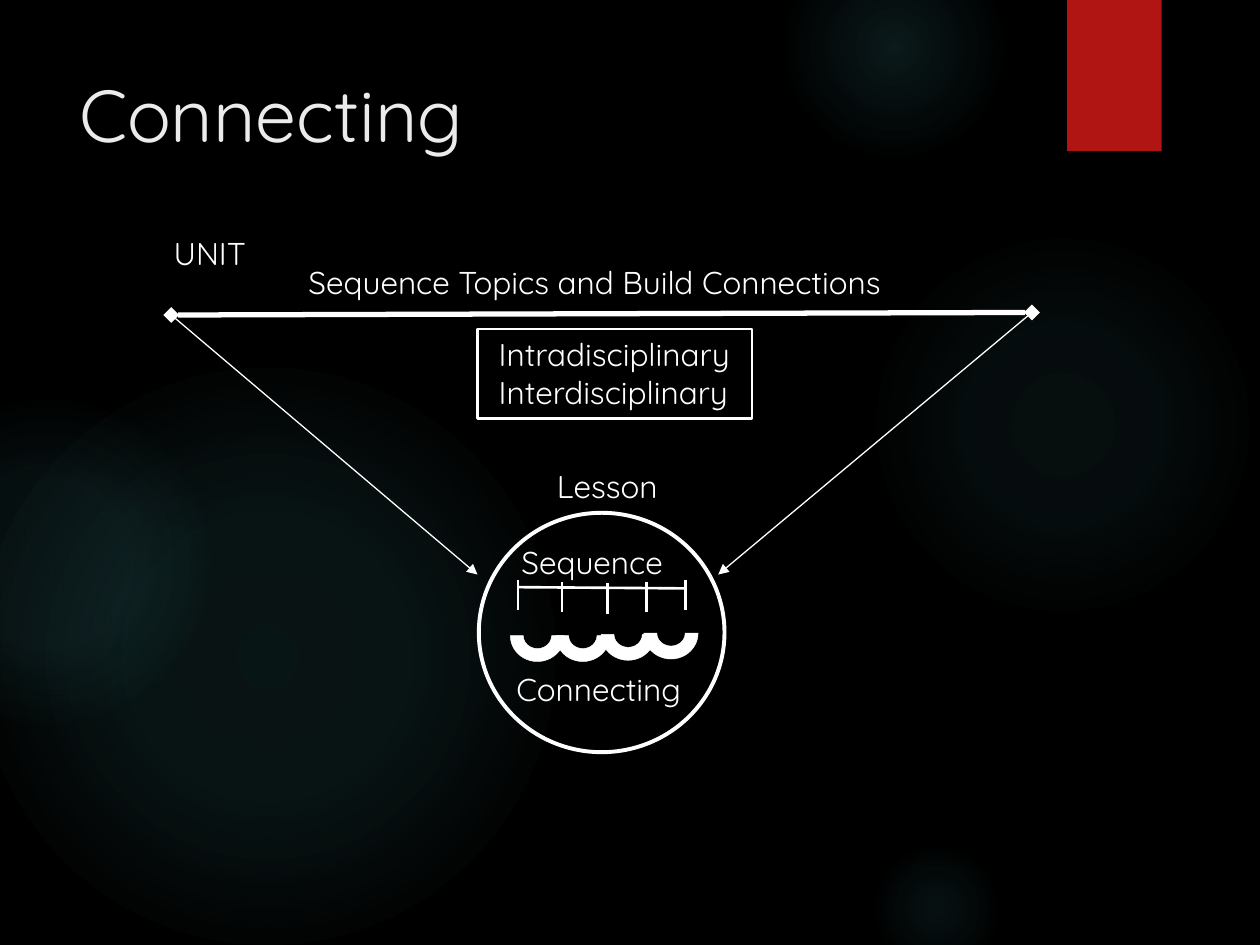
import lxml.etree
import pptx
import pptx.dml.color
import pptx.enum.shapes
import pptx.enum.text
import pptx.oxml.ns
import pptx.util

PX = 9144  # EMU in one px, at 100 px to the inch
FONT = "Quicksand"
COLORS = {
    "background": "000000",
    "glow": "50B9C1",
    "ribbon": "B01513",
    "title": "EBEBEB",
    "ink": "FFFFFF",
}
SHAPES = pptx.enum.shapes.MSO_SHAPE


def emu(*lengths):
    return [pptx.util.Emu(length * PX) for length in lengths]


def rgb(name):
    return pptx.dml.color.RGBColor.from_string(COLORS[name])


def add_child(parent, tag, **attributes):
    child = lxml.etree.SubElement(parent, pptx.oxml.ns.qn(tag))
    for key, value in attributes.items():
        child.set(key, str(value))
    return child


def add_shape(slide, kind, box, fill=None, line_width=0):
    shape = slide.shapes.add_shape(kind, *emu(*box))
    shape.shadow.inherit = False
    if fill:
        shape.fill.solid()
        shape.fill.fore_color.rgb = rgb(fill)
    else:
        shape.fill.background()
    if line_width:
        shape.line.color.rgb = rgb("ink")
        shape.line.width = pptx.util.Pt(line_width)
    else:
        shape.line.fill.background()
    return shape


def add_text(slide, box, text, size=18, color="ink", centered=False):
    shape = slide.shapes.add_textbox(*emu(*box))
    text_frame = shape.text_frame
    text_frame.word_wrap = True
    text_frame.text = text
    for paragraph in text_frame.paragraphs:
        if centered:
            paragraph.alignment = pptx.enum.text.PP_ALIGN.CENTER
        for run in paragraph.runs:
            run.font.name = FONT
            run.font.size = pptx.util.Pt(size)
            run.font.color.rgb = rgb(color)
    return shape


def add_line(slide, start, end, width, head=None, tail=None):
    connector = slide.shapes.add_connector(
        pptx.enum.shapes.MSO_CONNECTOR.STRAIGHT, *emu(*start, *end))
    connector.line.color.rgb = rgb("ink")
    connector.line.width = pptx.util.Pt(width)
    outline = connector.line._get_or_add_ln()
    if head:
        add_child(outline, "a:headEnd", type=head)
    if tail:
        add_child(outline, "a:tailEnd", type=tail)
    add_child(connector._element.spPr, "a:effectLst")
    return connector


def add_glow(slide, box, stops):
    """Soft round light; stops are (position, opacity) in percent."""
    shape = add_shape(slide, SHAPES.OVAL, box)
    properties = shape._element.spPr
    gradient = add_child(properties, "a:gradFill", rotWithShape=1)
    stop_list = add_child(gradient, "a:gsLst")
    for position, opacity in stops:
        stop = add_child(stop_list, "a:gs", pos=position * 1000)
        color = add_child(stop, "a:srgbClr", val=COLORS["glow"])
        add_child(color, "a:alpha", val=opacity * 1000)
    center = add_child(gradient, "a:path", path="circle")
    add_child(center, "a:fillToRect", l=50000, t=50000, r=50000, b=50000)
    no_fill = properties.find(pptx.oxml.ns.qn("a:noFill"))
    properties.replace(no_fill, gradient)


def add_backdrop(slide):
    slide.background.fill.solid()
    slide.background.fill.fore_color.rgb = rgb("background")
    # left, top, diameter, inner and middle opacity, end of the light
    glows = [
        (689, 183, 308, 7, 6, 69),
        (622, -50, 175, 14, 7, 73),
        (689, 667, 108, 9, 5, 66),
        (-17, 292, 458, 11, 10, 75),
        (-92, 317, 258, 8, 8, 72),
    ]
    for left, top, diameter, inner, middle, end in glows:
        add_glow(slide, (left, top, diameter, diameter),
                 [(0, inner), (36, middle), (end, 0)])
    add_shape(slide, SHAPES.RECTANGLE, (847, 0, 75, 120), fill="ribbon")


def add_unit(slide, box, arrow_tips):
    left, top, width, height = box
    start, end = (left, top + height), (left + width, top)

    # Unit span and its labels
    add_line(slide, start, end, 3, head="diamond", tail="diamond")
    add_text(slide, (left - 8, top - 67, 243, 40), "UNIT")
    add_text(slide, (left + 99, top - 44, 527, 40),
             "Sequence Topics and Build Connections")

    # Kinds of connection
    add_shape(slide, SHAPES.RECTANGLE, (left + 243, top + 13, 218, 71),
              line_width=1.5)
    add_text(slide, (left + 250, top + 13, 211, 71),
             "Intradisciplinary\nInterdisciplinary")

    # Arrows down to the lesson
    for origin, tip in zip((start, end), arrow_tips):
        add_line(slide, origin, tip, 0.75, tail="triangle")


def add_lesson(slide, box):
    left, top, width, height = box
    add_shape(slide, SHAPES.OVAL, box, line_width=2.25)
    add_text(slide, (left + 36, top - 41, 132, 40), "Lesson", centered=True)

    # Sequence: a scale with five ticks
    add_text(slide, (left + 24, top + 19, 147, 40), "Sequence")
    add_line(slide, (left + 31, top + 59), (left + 163, top + 60), 1.5)
    for x, y in [(31, 53), (66, 55), (102, 56), (133, 55), (164, 53)]:
        add_line(slide, (left + x, top + y), (left + x, top + y + 24), 1.5)

    # Connecting: a chain of upturned arcs
    for x, y in [(25, 77), (61, 77), (97, 76), (131, 75)]:
        arc = add_shape(slide, SHAPES.BLOCK_ARC, (left + x, top + y, 43, 41),
                        fill="ink", line_width=0.25)
        arc.rotation = 180
    add_text(slide, (left + 20, top + 120, 168, 40), "Connecting")


def main():
    presentation = pptx.Presentation()
    presentation.slide_width, presentation.slide_height = emu(1000, 750)
    slide = presentation.slides.add_slide(presentation.slide_layouts[6])

    add_backdrop(slide)
    add_text(slide, (53, 50, 772, 153), "Connecting", size=42, color="title")
    add_unit(slide, (136, 248, 683, 2), arrow_tips=[(379, 456), (570, 456)])
    add_lesson(slide, (380, 407, 195, 190))
    presentation.save("out.pptx")


if __name__ == "__main__":
    main()
